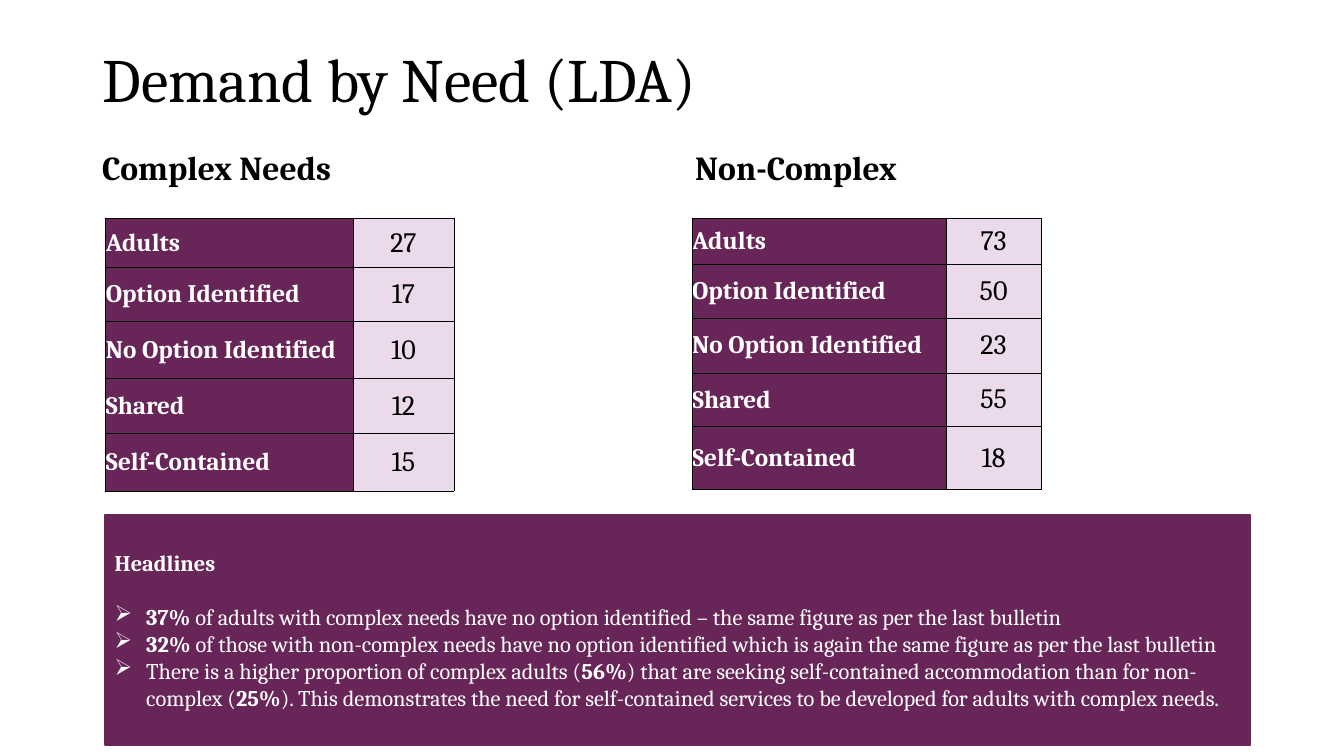
from dataclasses import dataclass

from lxml.etree import SubElement
from pptx import Presentation
from pptx.dml.color import RGBColor
from pptx.enum.shapes import MSO_SHAPE as Shape
from pptx.enum.text import MSO_ANCHOR as Anchor, PP_ALIGN as Align
from pptx.oxml.ns import qn
from pptx.util import Pt

FONT = "Cambria"
PLUM, LILAC, BLACK, WHITE = "682558", "EBDAEC", "000000", "FFFFFF"
NEEDS = ["Adults", "Option Identified", "No Option Identified", "Shared", "Self-Contained"]


@dataclass
class Label:
    text: str
    left: float
    top: float
    width: float
    height: float
    size: float
    bold: bool
    anchor: Anchor


@dataclass
class Grid:
    left: float
    cols: list[float]
    rows: list[float]
    inset: float
    counts: list[int]


@dataclass
class Point:
    spans: list[tuple[str, bool]]


LABELS = [
    Label("Demand by Need (LDA)", 66.2, 28.8, 828, 60.5, 44, False, Anchor.MIDDLE),
    Label("Complex Needs", 65.8, 99.4, 406, 38.2, 24, True, Anchor.BOTTOM),
    Label("Non-Complex", 489.5, 99.4, 408, 38.2, 24, True, Anchor.BOTTOM),
]
GRIDS = [
    Grid(75, [177.2, 72], [35.2, 38.5, 40.8, 39.4, 41.3], 0.7, [27, 17, 10, 12, 15]),
    Grid(494.4, [181.5, 67.7], [33.3, 38.5, 39.3, 37.9, 45.2], 0, [73, 50, 23, 55, 18]),
]
POINTS = [
    Point([
        ("37%", True),
        (" of adults with complex needs have no option identified – the same figure as per the last bulletin", False),
    ]),
    Point([
        ("32% ", True),
        ("of those with non-complex needs have no option identified which is again the same figure as per the last bulletin", False),
    ]),
    Point([
        ("There is a higher proportion of complex adults (", False),
        ("56%", True),
        (") that are seeking self-contained accommodation than for non-complex (", False),
        ("25%", True),
        ("). This demonstrates the need for self-contained services to be developed for adults with complex needs.", False),
    ]),
]


def color(code: str) -> RGBColor:
    return RGBColor.from_string(code)


def style(run, size: float, code: str, bold: bool) -> None:
    run.font.name = FONT
    run.font.size = Pt(size)
    run.font.bold = bold
    run.font.color.rgb = color(code)


def paint(item, code: str) -> None:
    item.fill.solid()
    item.fill.fore_color.rgb = color(code)


def add_label(slide, label: Label) -> None:
    box = slide.shapes.add_textbox(Pt(label.left), Pt(label.top), Pt(label.width), Pt(label.height))
    frame = box.text_frame
    frame.word_wrap = True
    frame.vertical_anchor = label.anchor
    frame.text = label.text
    para = frame.paragraphs[0]
    para.line_spacing = 0.9
    style(para.runs[0], label.size, BLACK, label.bold)


def add_edges(cell) -> None:
    props = cell._tc.get_or_add_tcPr()
    for side in ("lnL", "lnR", "lnT", "lnB"):
        edge = SubElement(props, qn(f"a:{side}"), w=str(Pt(0.5)))
        fill = SubElement(edge, qn("a:solidFill"))
        SubElement(fill, qn("a:srgbClr"), val=BLACK)


def fill_cell(cell, text: str, inset: float, head: bool) -> None:
    cell.margin_left = cell.margin_right = cell.margin_top = Pt(inset)
    cell.margin_bottom = 0
    cell.vertical_anchor = Anchor.MIDDLE
    add_edges(cell)
    paint(cell, PLUM if head else LILAC)
    cell.text = text
    para = cell.text_frame.paragraphs[0]
    para.alignment = Align.LEFT if head else Align.CENTER
    style(para.runs[0], 18 if head else 20, WHITE if head else BLACK, head)


def add_grid(slide, grid: Grid) -> None:
    frame = slide.shapes.add_table(
        len(grid.rows), len(grid.cols), Pt(grid.left), Pt(155.6), Pt(sum(grid.cols)), Pt(sum(grid.rows)))
    table = frame.table
    table.first_row = table.horz_banding = False
    for col, width in zip(table.columns, grid.cols):
        col.width = Pt(width)
    for row, height, need, count in zip(table.rows, grid.rows, NEEDS, grid.counts):
        row.height = Pt(height)
        fill_cell(row.cells[0], need, grid.inset, True)
        fill_cell(row.cells[1], str(count), grid.inset, False)


def add_point(frame, point: Point) -> None:
    para = frame.add_paragraph()
    para.alignment = Align.LEFT
    for text, bold in point.spans:
        run = para.add_run()
        run.text = text
        style(run, 16, WHITE, bold)
    props = para._p.get_or_add_pPr()
    props.set("marL", str(Pt(22.5)))
    props.set("indent", str(Pt(-22.5)))
    SubElement(props, qn("a:buChar"), char="➢")


def add_panel(slide, points: list[Point]) -> None:
    panel = slide.shapes.add_shape(Shape.RECTANGLE, Pt(74.9), Pt(367.9), Pt(818.6), Pt(164.2))
    panel.shadow.inherit = False
    paint(panel, PLUM)
    panel.line.color.rgb = color(PLUM)
    panel.line.width = Pt(1)
    frame = panel.text_frame
    frame.word_wrap = True
    frame.vertical_anchor = Anchor.MIDDLE
    frame.text = "Headlines"
    head = frame.paragraphs[0]
    head.alignment = Align.LEFT
    head.space_after = Pt(19.3)
    style(head.runs[0], 16, WHITE, True)
    for point in points:
        add_point(frame, point)


def main() -> None:
    deck = Presentation()
    deck.slide_width, deck.slide_height = Pt(960), Pt(540)
    slide = deck.slides.add_slide(deck.slide_layouts[6])
    for label in LABELS:
        add_label(slide, label)
    for grid in GRIDS:
        add_grid(slide, grid)
    add_panel(slide, POINTS)
    deck.save("out.pptx")


if __name__ == "__main__":
    main()
